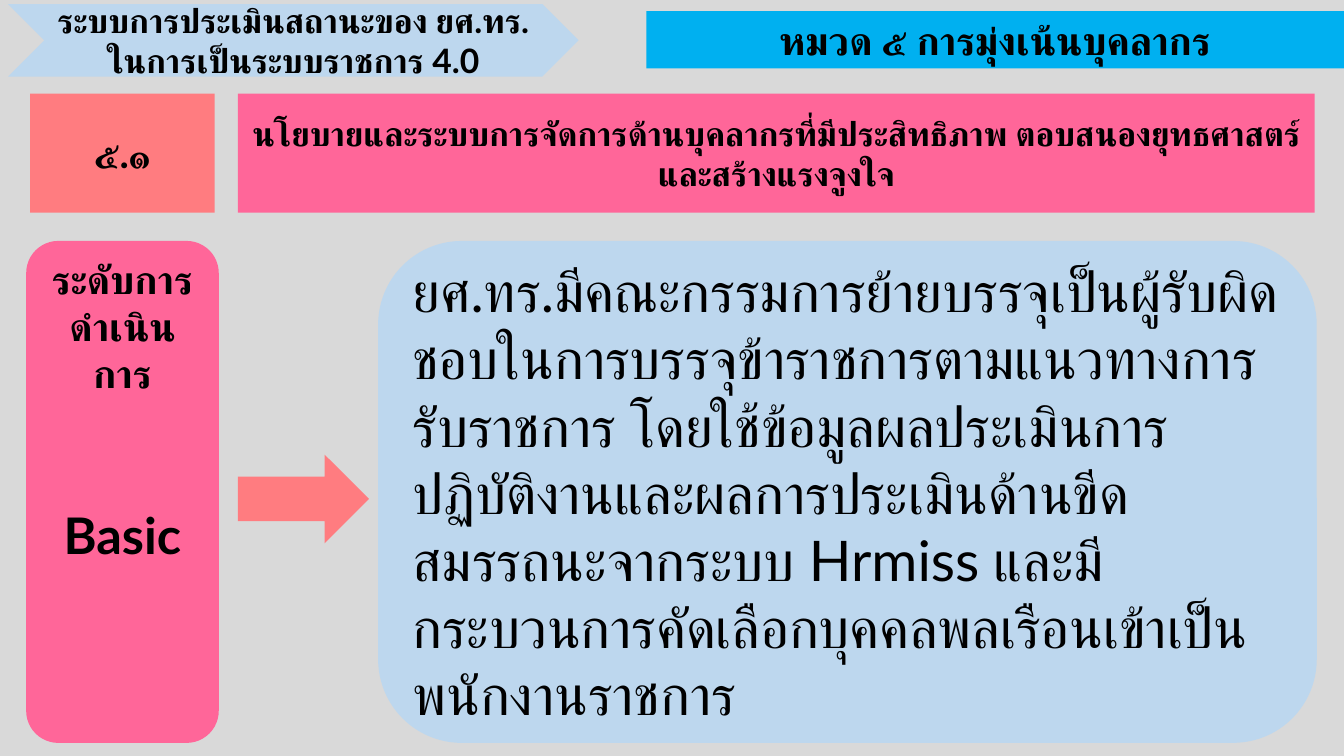
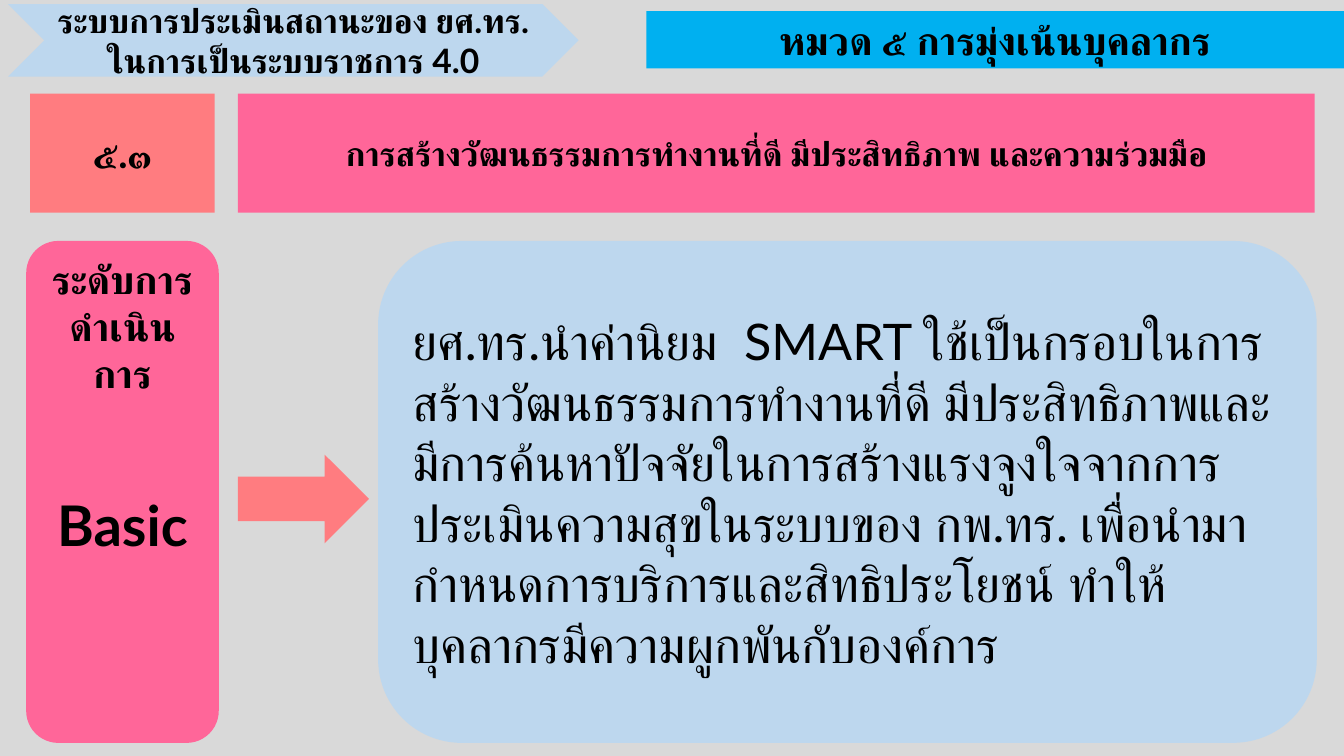
import pptx
import pptx.dml.color
import pptx.enum.lang
import pptx.enum.shapes
import pptx.enum.text
import pptx.oxml.ns
import pptx.util
from lxml import etree

RGBColor = pptx.dml.color.RGBColor
SHAPE = pptx.enum.shapes.MSO_SHAPE
ALIGN = pptx.enum.text.PP_ALIGN
ANCHOR = pptx.enum.text.MSO_ANCHOR

GREY = RGBColor(0xD9, 0xD9, 0xD9)
BLACK = RGBColor(0x00, 0x00, 0x00)
CYAN = RGBColor(0x00, 0xB0, 0xF0)
PALE_BLUE = RGBColor(0xBD, 0xD7, 0xEE)
PINK = RGBColor(0xFF, 0x66, 0x99)
CORAL = RGBColor(0xFF, 0x7C, 0x80)

FONT = "Lato"
WIDTH, HEIGHT = 13.33, 7.5

# Grid tracks: (start, length) in inches
COLUMNS = {
    "system": (0.08, 5.66),
    "category": (6.41, WIDTH - 6.41),
    "number": (0.3, 1.83),
    "topic": (2.36, 10.68),
    "level": (0.26, 1.91),
    "arrow": (2.36, 1.3),
    "result": (3.75, 9.31),
}
ROWS = {
    "system": (0.04, 0.72),
    "category": (0.11, 0.57),
    "topic": (0.93, 1.18),
    "result": (2.39, 4.98),
    "arrow": (4.51, 0.88),
}

SYSTEM = ["ระบบการประเมินสถานะของ ยศ.ทร.", "ในการเป็นระบบราชการ 4.0"]
CATEGORY = "หมวด ๕ การมุ่งเน้นบุคลากร"
LEVEL_HEADING = "ระดับการดำเนินการ"

TOPICS = [
    {
        "number": "๕.๑",
        "topic": "นโยบายและระบบการจัดการด้านบุคลากรที่มีประสิทธิภาพ "
                 "ตอบสนองยุทธศาสตร์และสร้างแรงจูงใจ",
        "level": "Basic", "level_size": 36, "level_gap": 77,
        "result": "ยศ.ทร.มีคณะกรรมการย้ายบรรจุเป็นผู้รับผิดชอบในการบรรจุข้าราชการ"
                  "ตามแนวทางการรับราชการ โดยใช้ข้อมูลผลประเมินการปฏิบัติงาน"
                  "และผลการประเมินด้านขีดสมรรถนะจากระบบ Hrmiss "
                  "และมีกระบวนการคัดเลือกบุคคลพลเรือนเข้าเป็นพนักงานราชการ",
        "result_size": 40,
    },
    {
        "number": "๕.๓",
        "topic": "การสร้างวัฒนธรรมการทำงานที่ดี มีประสิทธิภาพ และความร่วมมือ",
        "level": "Basic", "level_size": 40, "level_gap": 67,
        "result": "ยศ.ทร.นำค่านิยม  SMART ใช้เป็นกรอบในการสร้างวัฒนธรรมการทำงานที่ดี "
                  "มีประสิทธิภาพและมีการค้นหาปัจจัยในการสร้างแรงจูงใจ"
                  "จากการประเมินความสุขในระบบของ กพ.ทร. "
                  "เพื่อนำมากำหนดการบริการและสิทธิประโยชน์ ทำให้บุคลากร"
                  "มีความผูกพันกับองค์การ",
        "result_size": 36,
    },
]


def add_block(page, kind, column, row, color):
    left, width = COLUMNS[column]
    top, height = ROWS[row]
    box = page.shapes.add_shape(
        kind, *(pptx.util.Inches(n) for n in (left, top, width, height)))
    box.shadow.inherit = False
    box.fill.solid()
    box.fill.fore_color.rgb = color
    box.line.fill.background()
    return box


def style_span(span, size, bold):
    """Format a run, using the same font for Latin and Thai letters."""
    font = span.font
    font.size, font.bold, font.name = pptx.util.Pt(size), bold, FONT
    font.color.rgb = BLACK
    font.language_id = pptx.enum.lang.MSO_LANGUAGE_ID.THAI
    thai = etree.SubElement(span._r.get_or_add_rPr(), pptx.oxml.ns.qn("a:cs"))
    thai.set("typeface", FONT)


def write(box, lines, size, bold=True, align=ALIGN.CENTER, anchor=ANCHOR.MIDDLE):
    frame = box.text_frame
    frame.text = "\n".join(lines)
    frame.word_wrap = True
    frame.vertical_anchor = anchor
    for para in frame.paragraphs:
        para.alignment = align
        for span in para.runs:
            style_span(span, size, bold)
    return frame


def add_header(page):
    category = add_block(page, SHAPE.RECTANGLE, "category", "category", CYAN)
    frame = write(category, [CATEGORY], 28, anchor=ANCHOR.TOP)
    frame.auto_size = pptx.enum.text.MSO_AUTO_SIZE.SHAPE_TO_FIT_TEXT
    write(add_block(page, SHAPE.CHEVRON, "system", "system", PALE_BLUE), SYSTEM, 24)


def add_topic(page, topic):
    write(add_block(page, SHAPE.RECTANGLE, "number", "topic", CORAL),
          [topic["number"]], 28)
    write(add_block(page, SHAPE.RECTANGLE, "topic", "topic", PINK),
          [topic["topic"]], 24)


def add_level(page, topic):
    panel = add_block(page, SHAPE.ROUNDED_RECTANGLE, "level", "result", PINK)
    frame = write(panel, [LEVEL_HEADING, topic["level"]], 28, anchor=ANCHOR.TOP)
    level = frame.paragraphs[1]
    level.space_before = pptx.util.Pt(topic["level_gap"])
    level.runs[0].font.size = pptx.util.Pt(topic["level_size"])


def add_result(page, topic):
    add_block(page, SHAPE.RIGHT_ARROW, "arrow", "arrow", CORAL)
    panel = add_block(page, SHAPE.ROUNDED_RECTANGLE, "result", "result", PALE_BLUE)
    write(panel, [topic["result"]], topic["result_size"], bold=False, align=ALIGN.LEFT)


def main():
    deck = pptx.Presentation()
    deck.slide_width = pptx.util.Inches(WIDTH)
    deck.slide_height = pptx.util.Inches(HEIGHT)
    backdrop = deck.slide_master.background.fill
    backdrop.solid()
    backdrop.fore_color.rgb = GREY
    for topic in TOPICS:
        page = deck.slides.add_slide(deck.slide_layouts[6])
        add_header(page)
        add_topic(page, topic)
        add_level(page, topic)
        add_result(page, topic)
    deck.save("out.pptx")


if __name__ == "__main__":
    main()
